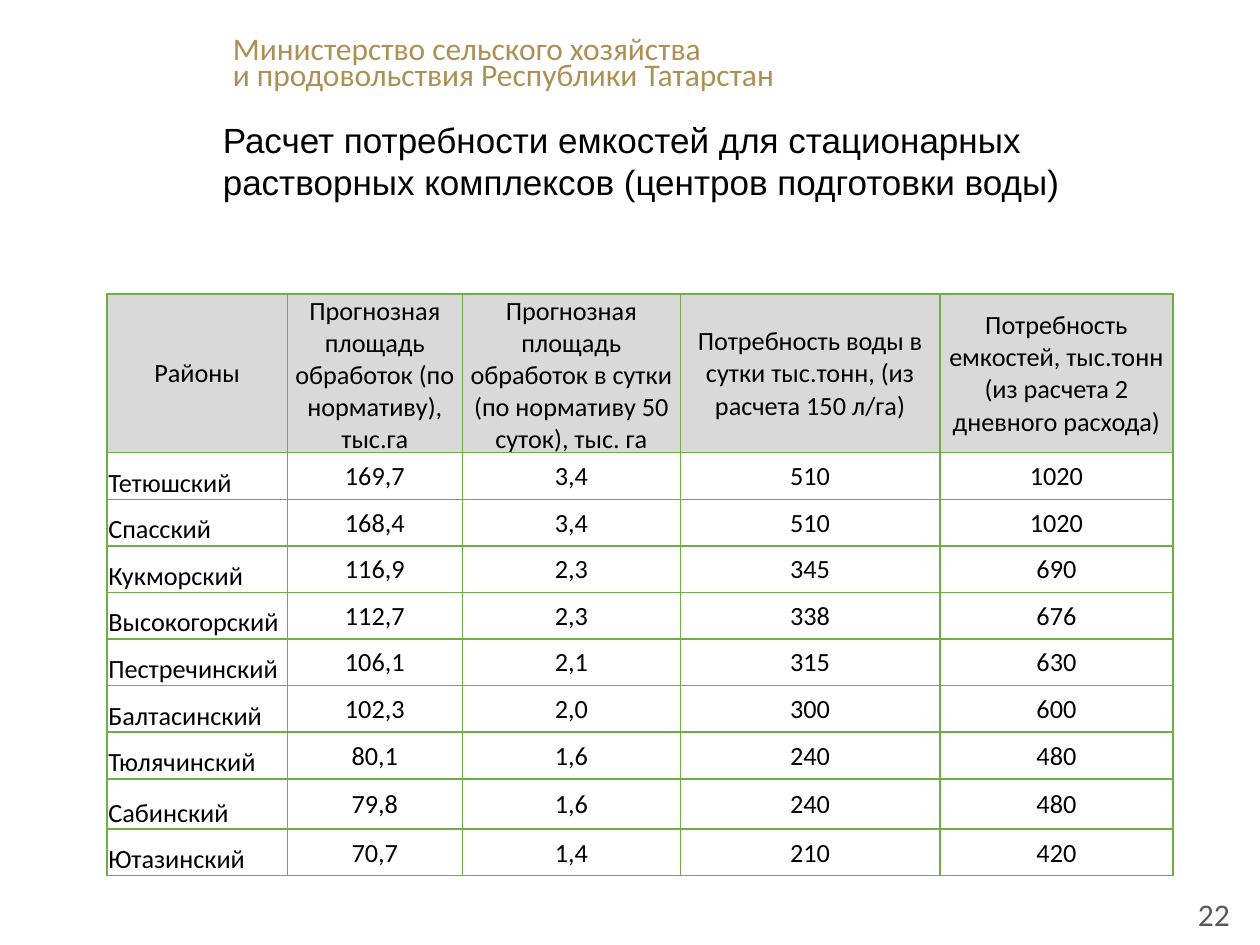
from lxml import etree
from pptx import Presentation
from pptx import util as u
from pptx.dml.color import RGBColor
from pptx.enum import text
from pptx.oxml.ns import qn

WIDTH, HEIGHT = 10, 7.5
COLORS = {"gold": "AC9054", "black": "000000", "gray": "595959",
          "header": "D9D9D9", "border": "70AD47"}

MINISTRY = ["Министерство сельского хозяйства",
            "и продовольствия Республики Татарстан"]
TITLE = ("Расчет потребности емкостей для стационарных "
         "растворных комплексов (центров подготовки воды)")
HEADINGS = ["Районы",
            "Прогнозная площадь обработок (по нормативу), тыс.га",
            "Прогнозная площадь обработок в сутки (по нормативу 50 суток), тыс. га",
            "Потребность воды в сутки тыс.тонн, (из расчета 150 л/га)",
            "Потребность емкостей, тыс.тонн (из расчета 2 дневного расхода)"]
DISTRICTS = [
    ["Тетюшский", "169,7", "3,4", "510", "1020"],
    ["Спасский", "168,4", "3,4", "510", "1020"],
    ["Кукморский", "116,9", "2,3", "345", "690"],
    ["Высокогорский", "112,7", "2,3", "338", "676"],
    ["Пестречинский", "106,1", "2,1", "315", "630"],
    ["Балтасинский", "102,3", "2,0", "300", "600"],
    ["Тюлячинский", "80,1", "1,6", "240", "480"],
    ["Сабинский", "79,8", "1,6", "240", "480"],
    ["Ютазинский", "70,7", "1,4", "210", "420"],
]
COLUMN_WIDTHS = [1.43, 1.39, 1.73, 2.06, 1.85]
ROW_HEIGHTS = [1.09] + [0.37] * 7 + [0.4, 0.37]


def area(left, top, width, height):
    return [u.Inches(WIDTH * left), u.Inches(HEIGHT * top),
            u.Inches(WIDTH * width), u.Inches(HEIGHT * height)]


def add_span(para, words, size, font, color):
    span = para.add_run()
    span.text = words
    span.font.size = u.Pt(size)
    span.font.name = font
    span.font.color.rgb = RGBColor.from_string(COLORS[color])


def add_text(page, place, lines, size, font, color, wrap=True, spacing=None):
    box = page.shapes.add_textbox(*place)
    frame = box.text_frame
    frame.word_wrap = wrap
    frame.auto_size = text.MSO_AUTO_SIZE.SHAPE_TO_FIT_TEXT
    for index, line in enumerate(lines):
        para = frame.add_paragraph() if index else frame.paragraphs[0]
        para.line_spacing = spacing
        add_span(para, line, size, font, color)


def set_borders(cell):
    properties = cell._tc.get_or_add_tcPr()
    for index, side in enumerate(("lnL", "lnR", "lnT", "lnB")):
        line = etree.Element(qn("a:" + side), w=str(u.Pt(1)))
        fill = etree.SubElement(line, qn("a:solidFill"))
        etree.SubElement(fill, qn("a:srgbClr"), val=COLORS["border"])
        properties.insert(index, line)


def fill_cell(cell, words, heading, district):
    cell.margin_left = cell.margin_right = cell.margin_top = u.Inches(0.01)
    cell.margin_bottom = 0
    if heading:
        cell.fill.solid()
        cell.fill.fore_color.rgb = RGBColor.from_string(COLORS["header"])
    else:
        cell.fill.background()
    para = cell.text_frame.paragraphs[0]
    para.alignment = text.PP_ALIGN.LEFT if district else text.PP_ALIGN.CENTER
    cell.vertical_anchor = text.MSO_ANCHOR.BOTTOM if district else text.MSO_ANCHOR.MIDDLE
    add_span(para, words, 15, "Calibri", "black")
    set_borders(cell)


def add_needs_table(page, place):
    rows = [HEADINGS] + DISTRICTS
    table = page.shapes.add_table(len(rows), len(HEADINGS), *place).table
    table.first_row = table.horz_banding = False
    for column, width in zip(table.columns, COLUMN_WIDTHS):
        column.width = u.Inches(width)
    for row, height in zip(table.rows, ROW_HEIGHTS):
        row.height = u.Inches(height)
    for r, values in enumerate(rows):
        for c, words in enumerate(values):
            fill_cell(table.cell(r, c), words, r == 0, r > 0 and c == 0)


def build_page(page):
    add_text(page, area(0.175, 0.035, 0.455, 0.072), MINISTRY,
             18, "Calibri", "gold", wrap=False, spacing=0.7)
    add_needs_table(page, area(0.085, 0.311, 0.846, 0.62))
    add_text(page, area(0.167, 0.119, 0.727, 0.103), [TITLE], 20, "Arial", "black")
    add_text(page, area(0.941, 0.941, 0.05, 0.053), ["22"], 18, "Calibri", "gray")


def main():
    deck = Presentation()
    deck.slide_width, deck.slide_height = u.Inches(WIDTH), u.Inches(HEIGHT)
    build_page(deck.slides.add_slide(deck.slide_layouts[6]))
    deck.save("out.pptx")


if __name__ == "__main__":
    main()
